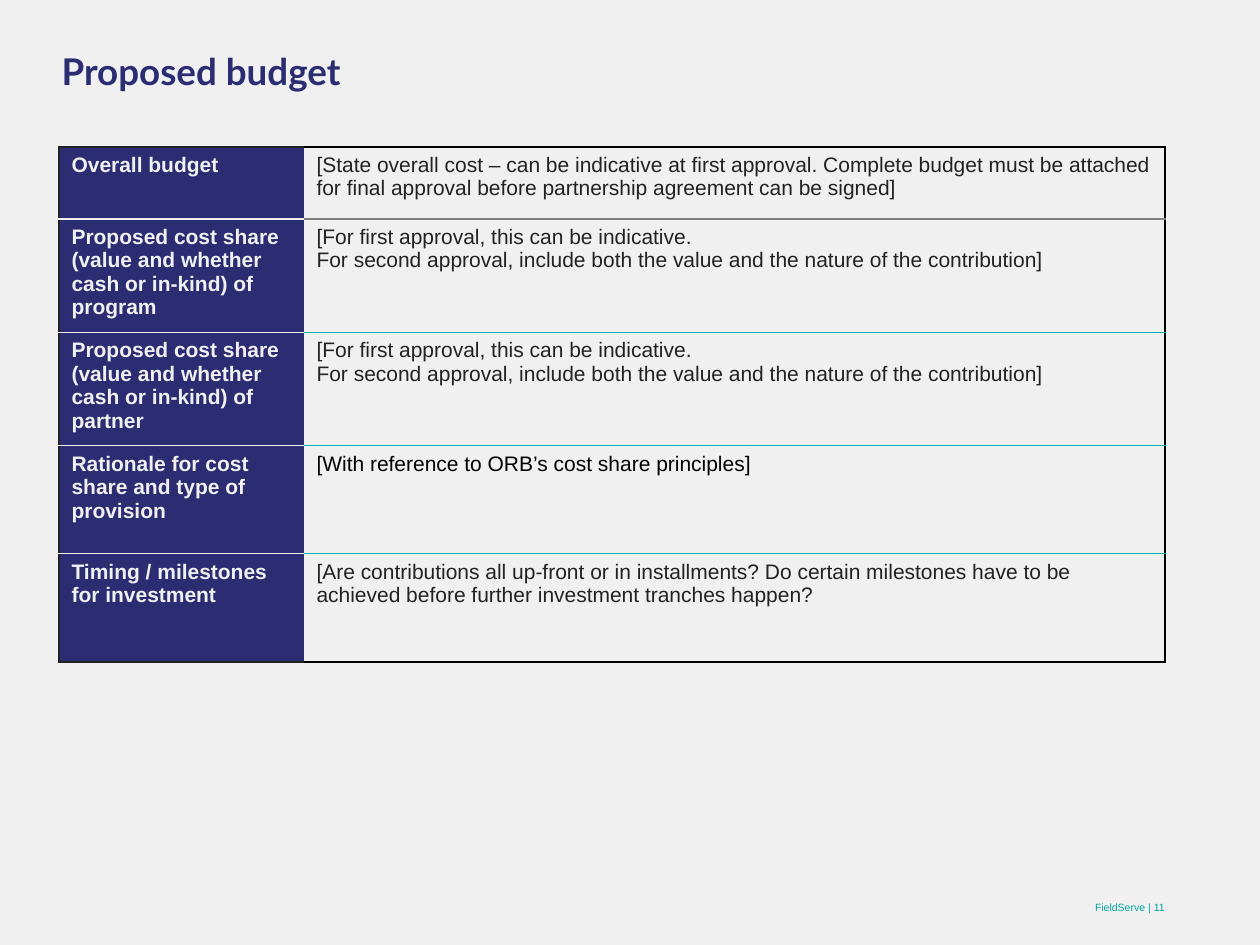
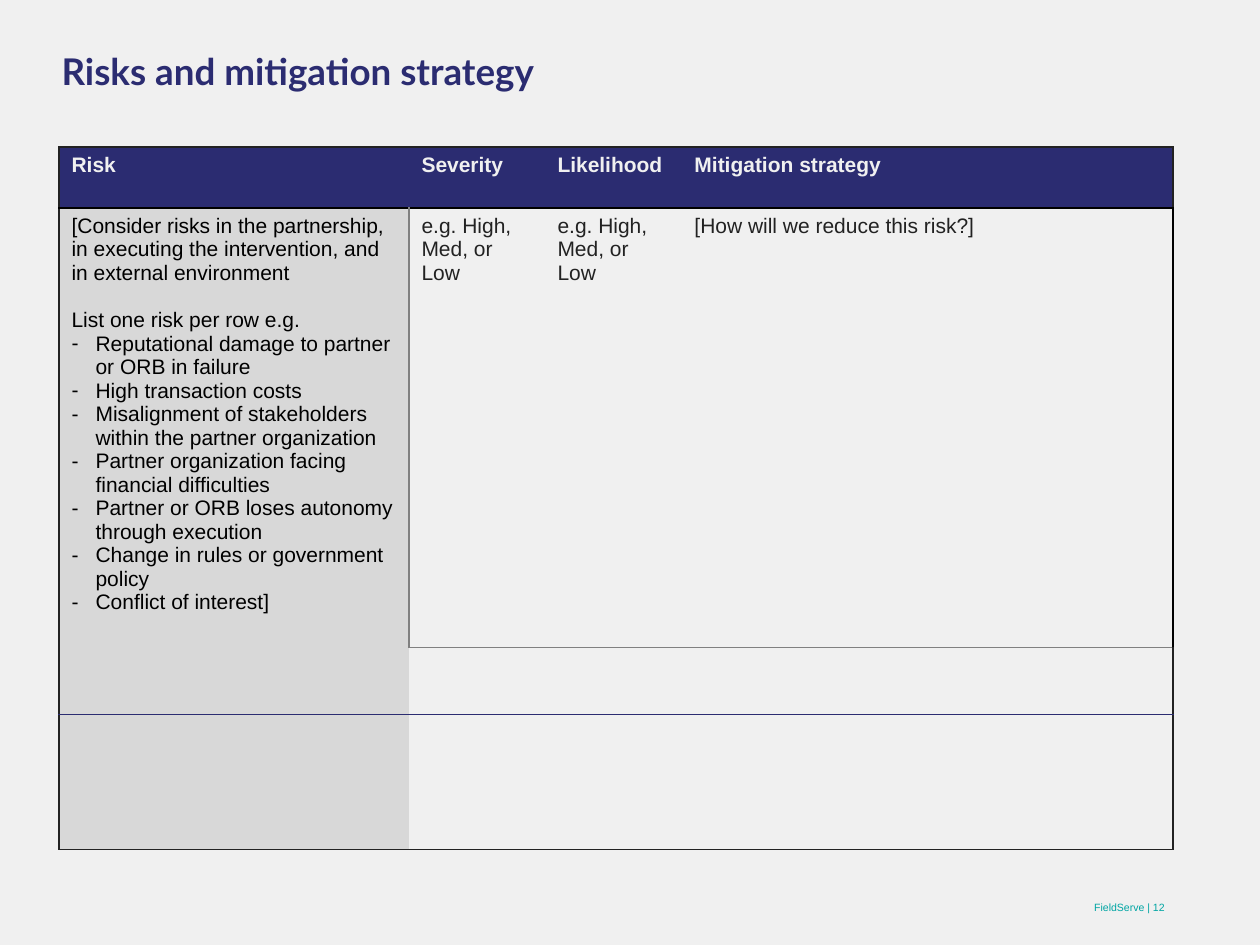
from lxml import etree
from pptx import Presentation
from pptx import util as u
from pptx.dml.color import RGBColor
from pptx.enum import text
from pptx.oxml.ns import qn

PX = 7257  # EMU per px, 126 px to the inch
NAVY = RGBColor(0x2B, 0x2C, 0x71)
PAPER = RGBColor(0xF0, 0xF0, 0xF0)
INK = RGBColor(0x22, 0x22, 0x22)
BLACK = RGBColor(0, 0, 0)
TEAL = RGBColor(0x00, 0xB1, 0xB0)
FOOTER_TEAL = RGBColor(0x00, 0xA5, 0xA3)
GREY = RGBColor(0x80, 0x80, 0x80)
SILVER = RGBColor(0xD8, 0xD8, 0xD8)

TITLE_BOX = (49, 42, 1118, 73)
FOOTER_BOX = (883, 882, 294, 50)
TABLE_CORNER = (59, 147)
DASH_INDENT = 24

FRAME_INK, FRAME_BLACK = (INK, 1), (BLACK, 1)
THIN_PAPER, THIN_GREY = (PAPER, 0.75), (GREY, 0.75)
THIN_TEAL, THIN_NAVY = (TEAL, 0.75), (NAVY, 0.75)

INDICATIVE = ["[For first approval, this can be indicative.",
              "For second approval, include both the value and the nature of the contribution]"]
BUDGET = [
    ("Overall budget",
     ["[State overall cost – can be indicative at first approval. Complete budget must be "
      "attached for final approval before partnership agreement can be signed]"], INK),
    ("Proposed cost share (value and whether cash or in-kind) of program", INDICATIVE, INK),
    ("Proposed cost share (value and whether cash or in-kind) of partner", INDICATIVE, INK),
    ("Rationale for cost share and type of provision",
     ["[With reference to ORB’s cost share principles]"], BLACK),
    ("Timing / milestones for investment",
     ["[Are contributions all up-front or in installments? Do certain milestones have to be "
      "achieved before further investment tranches happen?"], INK),
]
RISK_HEADINGS = ["Risk", "Severity", "Likelihood", "Mitigation strategy"]
RISK_INTRO = ["[Consider risks in the partnership, in executing the intervention, and in "
              "external environment", "List one risk per row e.g."]
RISKS = ["Reputational damage to partner or ORB in failure",
         "High transaction costs",
         "Misalignment of stakeholders within the partner organization",
         "Partner organization facing financial difficulties",
         "Partner or ORB loses autonomy through execution",
         "Change in rules or government policy",
         "Conflict of interest]"]
RATING = ["e.g. High, Med, or Low"]
MITIGATION = ["[How will we reduce this risk?]"]


def emu(*lengths):
    return [length * PX for length in lengths]


def style(paragraph, size, color, bold=False, font="Arial"):
    for run in paragraph.runs:
        run.font.size = u.Pt(size)
        run.font.name = font
        run.font.bold = bold
        run.font.color.rgb = color


def add_page(prs, heading, number):
    """Add a slide with its title and footer."""
    slide = prs.slides.add_slide(prs.slide_layouts[5])
    title = slide.shapes.title
    title.left, title.top, title.width, title.height = emu(*TITLE_BOX)
    frame = title.text_frame
    frame.text = heading
    frame.auto_size = text.MSO_AUTO_SIZE.NONE
    frame.vertical_anchor = text.MSO_ANCHOR.TOP
    frame.paragraphs[0].alignment = text.PP_ALIGN.LEFT
    style(frame.paragraphs[0], 21, NAVY, True, "Lato")

    footer = slide.shapes.add_textbox(*emu(*FOOTER_BOX)).text_frame
    footer.word_wrap = True
    footer.vertical_anchor = text.MSO_ANCHOR.MIDDLE
    footer.text = f"FieldServe | {number}"
    footer.paragraphs[0].alignment = text.PP_ALIGN.RIGHT
    style(footer.paragraphs[0], 6, FOOTER_TEAL)
    return slide


def add_grid(slide, corner, widths, heights):
    """Add a plain table with the given column widths and row heights."""
    frame = slide.shapes.add_table(len(heights), len(widths),
                                   *emu(*corner, sum(widths), sum(heights)))
    table = frame.table
    table.first_row = table.horz_banding = False
    for column, width in zip(table.columns, widths):
        column.width = width * PX
    for row, height in zip(table.rows, heights):
        row.height = height * PX
    return table


def rule_cells(table, across, down):
    """Draw cell borders: across[row edge][column] and down[row][column edge]."""
    for r, row in enumerate(table.rows):
        for c, cell in enumerate(row.cells):
            sides = {"a:lnL": down[r][c], "a:lnR": down[r][c + 1],
                     "a:lnT": across[r][c], "a:lnB": across[r + 1][c]}
            properties = cell._tc.get_or_add_tcPr()
            for tag, rule in sides.items():
                line = etree.SubElement(properties, qn(tag))
                if rule is None:
                    etree.SubElement(line, qn("a:noFill"))
                    continue
                color, width = rule
                line.set("w", str(u.Pt(width)))
                fill = etree.SubElement(line, qn("a:solidFill"))
                etree.SubElement(fill, qn("a:srgbClr"), val=str(color))


def paint(cell, color=None):
    if color is None:
        cell.fill.background()
    else:
        cell.fill.solid()
        cell.fill.fore_color.rgb = color


def write(cell, lines, color, bold=False):
    cell.text_frame.text = "\n".join(lines)
    for paragraph in cell.text_frame.paragraphs:
        style(paragraph, 12, color, bold)


def add_dash(paragraph):
    properties = paragraph._p.get_or_add_pPr()
    properties.set("marL", str(DASH_INDENT * PX))
    properties.set("indent", str(-DASH_INDENT * PX))
    etree.SubElement(properties, qn("a:buFont"), typeface="Arial")
    etree.SubElement(properties, qn("a:buChar"), char="-")


def add_budget_table(slide, corner):
    table = add_grid(slide, corner, [245, 861], [72] + [108] * 4)
    frame = [FRAME_INK, FRAME_BLACK]
    across = [frame, [THIN_PAPER, THIN_GREY], *[[THIN_PAPER, THIN_TEAL]] * 3, frame]
    rule_cells(table, across, [[FRAME_INK, None, FRAME_BLACK]] * len(BUDGET))
    for row, (label, details, color) in zip(table.rows, BUDGET):
        label_cell, detail_cell = row.cells
        paint(label_cell, NAVY)
        write(label_cell, [label], PAPER, True)
        paint(detail_cell)
        write(detail_cell, details, color)


def add_risk_table(slide, corner):
    table = add_grid(slide, corner, [350, 136, 137, 491], [61, 439, 67, 67, 68])
    across = [[FRAME_INK] * 4, [FRAME_BLACK] * 4, [None] + [THIN_GREY] * 3,
              [THIN_NAVY] * 4, [None] * 4, [FRAME_INK] * 4]
    plain = [FRAME_INK, None, None, None, FRAME_INK]
    first_risk = [FRAME_INK, THIN_GREY, None, None, FRAME_BLACK]
    rule_cells(table, across, [plain, first_risk, plain, plain, plain])

    for r, row in enumerate(table.rows):
        for c, cell in enumerate(row.cells):
            paint(cell, NAVY if r == 0 else SILVER if c == 0 else None)
    for c, heading in enumerate(RISK_HEADINGS):
        write(table.cell(0, c), [heading], PAPER, True)

    risk_cell = table.cell(1, 0)
    write(risk_cell, RISK_INTRO + RISKS, BLACK)
    paragraphs = risk_cell.text_frame.paragraphs
    paragraphs[1].space_before = u.Pt(13.5)
    for paragraph in paragraphs[len(RISK_INTRO):]:
        add_dash(paragraph)
    for c, lines in enumerate([RATING, RATING, MITIGATION], start=1):
        write(table.cell(1, c), lines, INK)


def main():
    prs = Presentation()
    prs.slide_width, prs.slide_height = emu(1260, 945)
    background = prs.slide_master.background.fill
    background.solid()
    background.fore_color.rgb = PAPER

    add_budget_table(add_page(prs, "Proposed budget", 11), TABLE_CORNER)
    add_risk_table(add_page(prs, "Risks and mitigation strategy", 12), TABLE_CORNER)
    prs.save("out.pptx")


if __name__ == "__main__":
    main()
